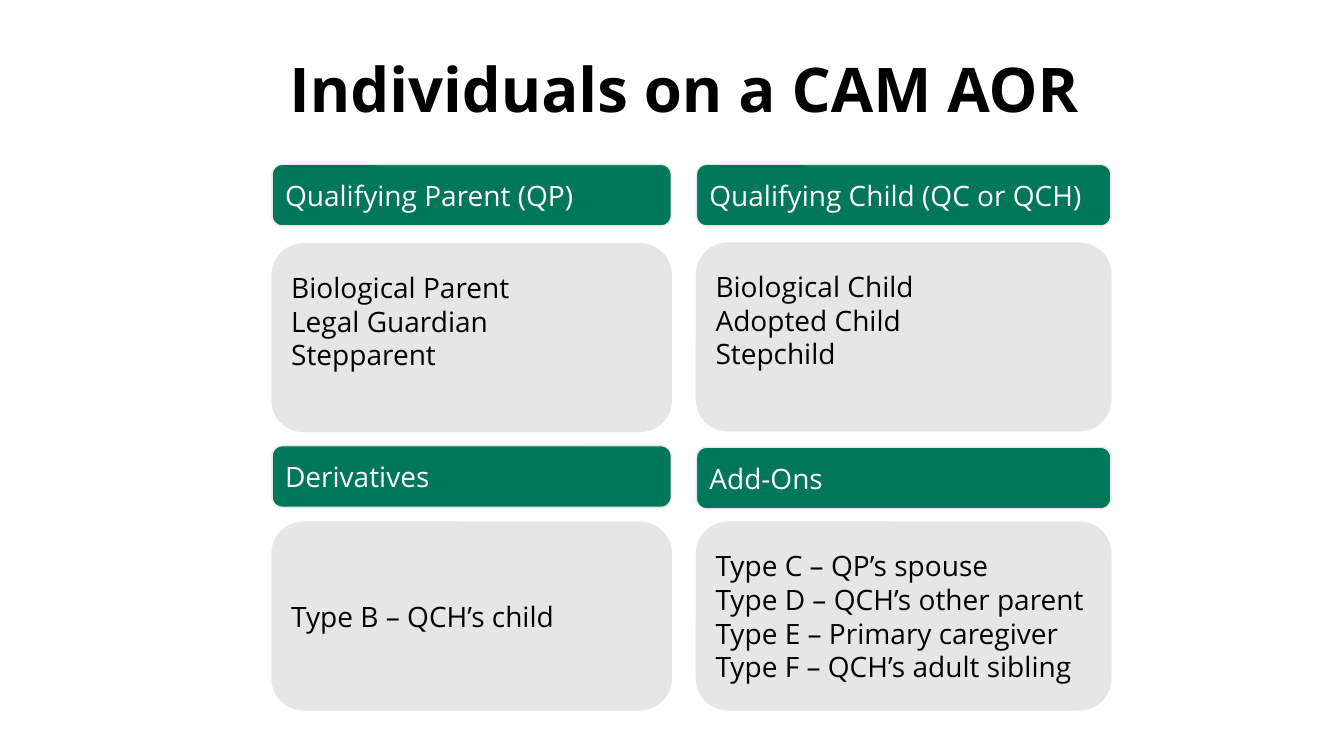
import pptx
import pptx.util
import pptx.dml.color
import pptx.enum.shapes
import pptx.enum.text

Pt = pptx.util.Pt
RGBColor = pptx.dml.color.RGBColor
MSO_ANCHOR = pptx.enum.text.MSO_ANCHOR
PP_ALIGN = pptx.enum.text.PP_ALIGN

GREEN = RGBColor(0x00, 0x76, 0x5A)
GRAY = RGBColor(0xE7, 0xE6, 0xE6)
BLACK = RGBColor(0x00, 0x00, 0x00)
WHITE = RGBColor(0xFF, 0xFF, 0xFF)
FONT = "Open Sans"
TEXT_SIZE = 20
LINE_HEIGHT = 24
INSET = 3.6
HEADER_HEIGHT = 44
BODY_HEIGHT = 134

# Each group: left, width, header top, body top, heading, lines, free lines below
GROUPS = [
    (194.4, 285.1, 117.4, 174.2, "Qualifying Parent (QP)",
     ["Biological Parent", "Legal Guardian", "Stepparent"], 1),
    (497.5, 296, 117.4, 173.7, "Qualifying Child (QC or QCH)",
     ["Biological Child", "Adopted Child", "Stepchild"], 1),
    (194.4, 285.1, 318.4, 373, "Derivatives", ["Type B – QCH’s child"], 0),
    (497.5, 296, 319.5, 373, "Add-Ons",
     ["Type C – QP’s spouse", "Type D – QCH’s other parent",
      "Type E – Primary caregiver", "Type F – QCH’s adult sibling"], 0),
]


def format_text(tf, size, color, align, bold=False):
    for p in tf.paragraphs:
        p.alignment = align
        for r in p.runs:
            r.font.name = FONT
            r.font.size = Pt(size)
            r.font.bold = bold
            r.font.color.rgb = color


def add_title(s, left, top, width, height):
    sp = s.shapes.title
    sp.left, sp.top, sp.width, sp.height = Pt(left), Pt(top), Pt(width), Pt(height)
    tf = sp.text_frame
    tf.text = "Individuals on a CAM AOR"
    tf.word_wrap = True
    tf.vertical_anchor = MSO_ANCHOR.TOP
    format_text(tf, 44, BLACK, PP_ALIGN.CENTER, bold=True)


def add_panel(s, left, top, width, height, lines, fill, color, free_lines=0):
    """Add a rounded panel, keeping free_lines of room below its text."""
    sp = s.shapes.add_shape(pptx.enum.shapes.MSO_SHAPE.ROUNDED_RECTANGLE,
                            Pt(left), Pt(top), Pt(width), Pt(height))
    sp.shadow.inherit = False
    sp.fill.solid()
    sp.fill.fore_color.rgb = fill
    sp.line.color.rgb = GRAY
    sp.line.width = Pt(1)
    tf = sp.text_frame
    tf.text = "\n".join(lines)
    tf.word_wrap = True
    tf.vertical_anchor = MSO_ANCHOR.MIDDLE
    tf.margin_bottom = Pt(INSET + free_lines * LINE_HEIGHT)
    format_text(tf, TEXT_SIZE, color, PP_ALIGN.LEFT)


def add_group(s, left, width, header_top, body_top, heading, lines, free_lines):
    add_panel(s, left, body_top, width, BODY_HEIGHT, lines, GRAY, BLACK, free_lines)
    add_panel(s, left, header_top, width, HEADER_HEIGHT, [heading], GREEN, WHITE)


def main():
    prs = pptx.Presentation()
    prs.slide_width, prs.slide_height = Pt(960), Pt(540)
    s = prs.slides.add_slide(prs.slide_layouts[5])
    add_title(s, 131.8, 33.1, 714.2, 60.5)
    for group in GROUPS:
        add_group(s, *group)
    prs.save("out.pptx")


if __name__ == "__main__":
    main()
